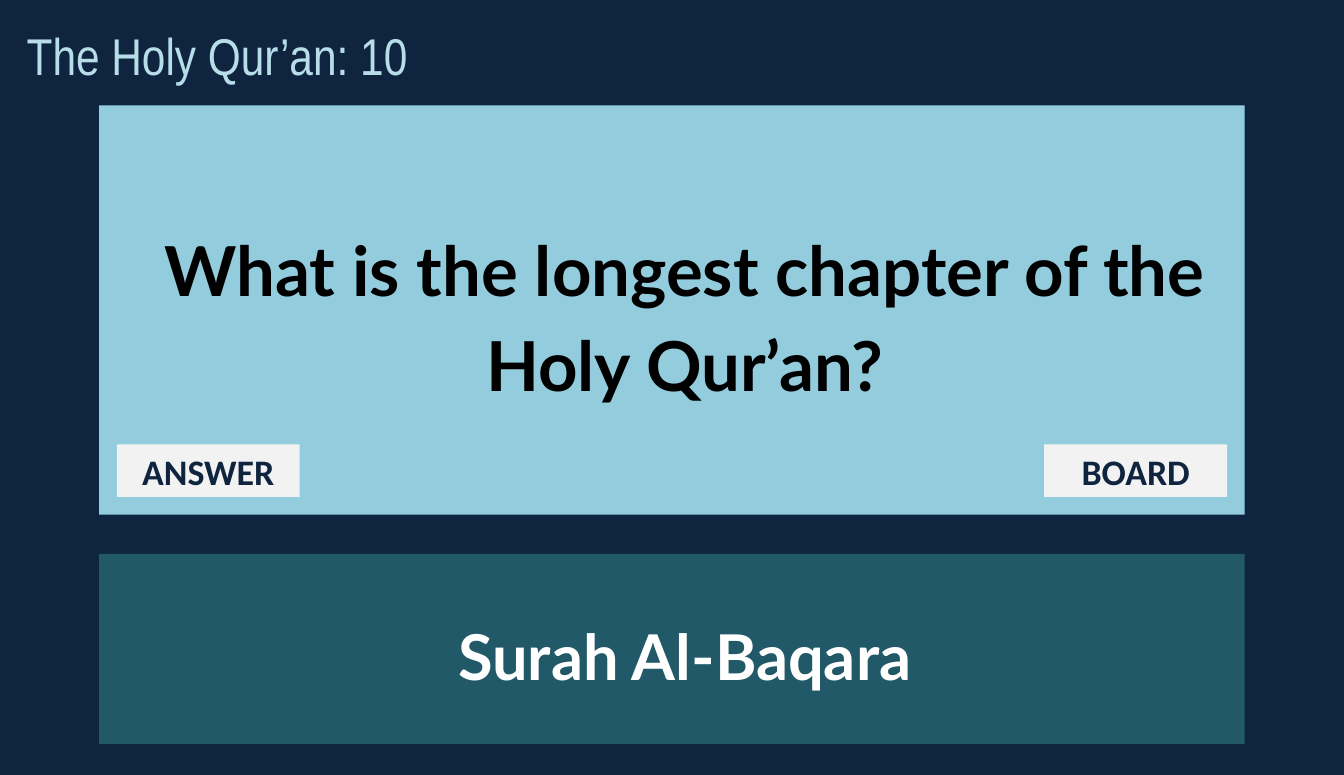
from pptx import Presentation
from pptx.dml.color import RGBColor
from pptx.enum import shapes, text
from pptx.util import Inches, Pt

COLOURS = {
    "navy": "0F243E",
    "sky": "93CDDD",
    "teal": "215968",
    "pale_blue": "B7DEE8",
    "light_grey": "F2F2F2",
    "black": "000000",
    "white": "FFFFFF",
}
PANEL_LEFT, PANEL_WIDTH = 0.96, 11.08
BUTTON_TOP, BUTTON_WIDTH, BUTTON_HEIGHT = 4.3, 1.77, 0.51
INNER_LEFT, INNER_RIGHT = 1.13, 11.87


def colour(name):
    return RGBColor.from_string(COLOURS[name])


def write_text(shape, content, *, font, size, color, bold=False,
               align=text.PP_ALIGN.CENTER, anchor=text.MSO_ANCHOR.MIDDLE,
               body=False):
    frame = shape.text_frame
    frame.word_wrap = True
    frame.vertical_anchor = anchor
    paragraph = frame.paragraphs[0]
    paragraph.alignment = align
    if body:
        # Indented body paragraph with looser lines
        paragraph.line_spacing = 1.15
        paragraph.space_after = Pt(8)
        properties = paragraph._p.get_or_add_pPr()
        properties.set("marL", str(Inches(0.25)))
        properties.set("indent", "0")
    run = paragraph.add_run()
    run.text = content
    run.font.name = font
    run.font.size = Pt(size)
    run.font.bold = bold
    run.font.color.rgb = colour(color)


def add_panel(slide, left, top, width, height, fill):
    shape = slide.shapes.add_shape(
        shapes.MSO_SHAPE.RECTANGLE,
        Inches(left), Inches(top), Inches(width), Inches(height))
    shape.shadow.inherit = False
    shape.fill.solid()
    shape.fill.fore_color.rgb = colour(fill)
    shape.line.fill.background()
    return shape


def add_button(slide, left, label):
    button = add_panel(slide, left, BUTTON_TOP, BUTTON_WIDTH, BUTTON_HEIGHT,
                       "light_grey")
    write_text(button, label, font="Calibri", size=25, color="navy", bold=True)


def add_text_box(slide, left, top, width, height, content, **text_format):
    box = slide.shapes.add_textbox(
        Inches(left), Inches(top), Inches(width), Inches(height))
    write_text(box, content, anchor=text.MSO_ANCHOR.TOP, **text_format)
    box.text_frame.auto_size = text.MSO_AUTO_SIZE.SHAPE_TO_FIT_TEXT


def main():
    presentation = Presentation()
    presentation.slide_width = Inches(13)
    presentation.slide_height = Inches(7.5)
    slide = presentation.slides.add_slide(presentation.slide_layouts[6])
    slide.background.fill.solid()
    slide.background.fill.fore_color.rgb = colour("navy")

    # Question and answer panels
    question = add_panel(slide, PANEL_LEFT, 1.02, PANEL_WIDTH, 3.96, "sky")
    write_text(question, "What is the longest chapter of the Holy Qur’an?",
               font="Lato", size=48, color="black", bold=True, body=True)
    add_panel(slide, PANEL_LEFT, 5.36, PANEL_WIDTH, 1.84, "teal")

    # Category title
    add_text_box(slide, 0.16, 0.18, 4.4, 0.71, "The Holy Qur’an: 10",
                 font="Arial Narrow", size=36, color="pale_blue",
                 align=text.PP_ALIGN.LEFT)

    # Buttons at the two ends of the question panel
    add_button(slide, INNER_RIGHT - BUTTON_WIDTH, "BOARD")
    add_button(slide, INNER_LEFT, "ANSWER")

    # Answer text
    add_text_box(slide, INNER_LEFT, 5.82, INNER_RIGHT - INNER_LEFT, 0.91,
                 "Surah Al-Baqara", font="Lato", size=44, color="white",
                 bold=True, body=True)

    presentation.save("out.pptx")


if __name__ == "__main__":
    main()
